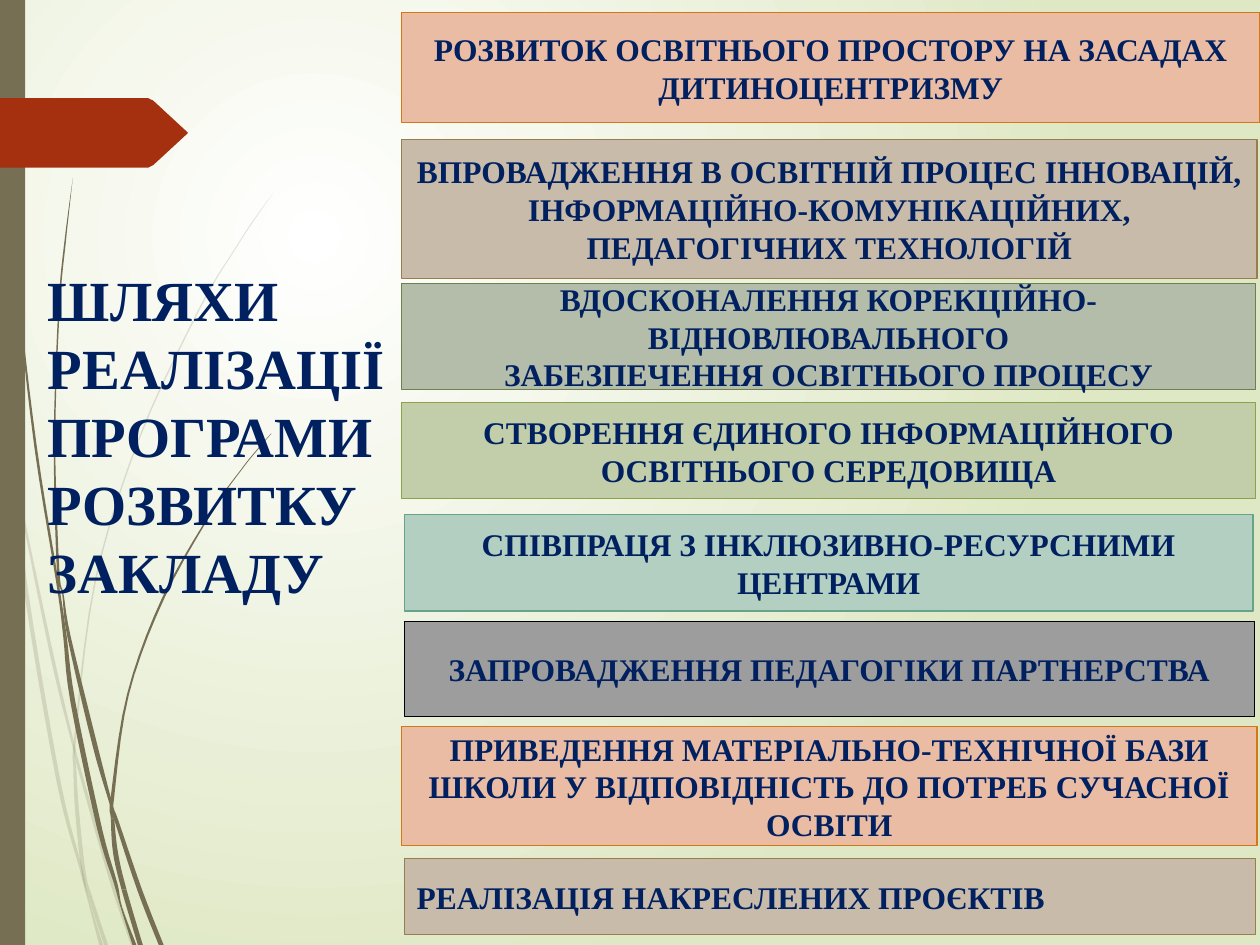
from lxml import etree
from pptx import Presentation
from pptx.dml.color import RGBColor
from pptx.enum.shapes import MSO_SHAPE
from pptx.enum.text import MSO_ANCHOR as ANCHOR, MSO_AUTO_SIZE as AUTO, PP_ALIGN as ALIGN
from pptx.oxml.ns import qn
from pptx.util import Cm, Pt

FONT = "Times New Roman"
WIDTH, HEIGHT = 25.4, 19.05
CURVE_STEPS = 5
COLORS = {
    "white": "FFFFFF", "lime": "DFE8C4", "bark": "766F54", "red": "A53010",
    "navy": "002060", "peach": "EBBCA4", "orange": "D47817", "sand": "C8BBAA",
    "brown": "987D4D", "sage": "B4BCAA", "moss": "6D804F", "leaf": "C2CEA9",
    "olive": "8BA249", "mint": "B3CFC2", "teal": "65A48B", "gray": "9D9D9D",
    "black": "000000",
}

PALE_STEMS = [
    ([2, 6],
     [(0, 7.16, 0.02), (0, 7.38, 0.05), (0.23, 9.22, 0.05), (0.53, 11.93, 0.08),
      (1.18, 15.75, 0.08), (1.63, 17.5, 0.06), (1.77, 18.1, 0.03), (2.04, 19.05, 0.08)]),
    ([4],
     [(0.25, 8.76, 0), (0.3, 9.55, 0.03), (1.05, 13.23, 0.07), (1.49, 15.06, 0.05),
      (1.6, 15.5, 0.06), (2.2, 17.6, 0.08), (2.69, 19.05, 0.1)]),
    ([6, 7, 10],
     [(5.51, 3.89, 0), (5.11, 4.45, 0.02), (4.74, 5.02, 0.02), (4.03, 6.21, 0.03),
      (2.81, 8.83, 0.03), (1.92, 11.72, 0.03), (1.52, 14.83, 0.04), (1.51, 15.49, 0.06),
      (1.56, 16.41, 0.08), (1.69, 17.6, 0.08), (1.82, 18.08, 0.08), (2.14, 19.05, 0.08)]),
]
DARK_STEMS = [
    ([4, 9],
     [(0.06, 0, 0.03), (0.14, 2.79, 0.03), (0.37, 5.92, 0.03), (0.72, 9.02, 0.05),
      (1.17, 11.81, 0.05), (1.31, 12.83, 0.07), (1.47, 14.15, 0.1), (2.01, 16.71, 0.1),
      (2.33, 17.8, 0.07), (2.45, 18.3, 0.03), (2.71, 19.05, 0.08)]),
    ([5, 8],
     [(1.47, 3.58, 0), (1.31, 4.9, 0.03), (1.19, 6.22, 0.03), (1.1, 8.86, 0.03),
      (1.17, 11.46, 0.05), (1.27, 11.99, 0.03), (1.39, 12.83, 0.07), (1.91, 15.01, 0.1),
      (2.24, 16.21, 0.06), (2.35, 16.55, 0.08), (2.82, 17.95, 0.1), (3.25, 19.05, 0.1)]),
    ([6, 7, 9],
     [(5.47, 8.74, 0.01), (5.16, 9.1, 0.02), (4.85, 9.49, 0.02), (4.28, 10.3, 0.03),
      (3.29, 12.06, 0.05), (2.58, 14, 0.04), (2.27, 16.05, 0.07), (2.27, 16.5, 0.07),
      (2.33, 17.2, 0.1), (2.5, 17.93, 0.1), (2.83, 19.05, 0.1)]),
]

GOALS = [
    (8.1, 0.26, 17.3, 2.21, "peach", "orange", ALIGN.CENTER,
     ["РОЗВИТОК ОСВІТНЬОГО ПРОСТОРУ НА ЗАСАДАХ ДИТИНОЦЕНТРИЗМУ"]),
    (8.1, 2.81, 17.24, 2.8, "sand", "brown", ALIGN.CENTER,
     ["ВПРОВАДЖЕННЯ В ОСВІТНІЙ ПРОЦЕС ІННОВАЦІЙ, "
      "ІНФОРМАЦІЙНО-КОМУНІКАЦІЙНИХ, ПЕДАГОГІЧНИХ ТЕХНОЛОГІЙ"]),
    (8.1, 5.72, 17.21, 2.13, "sage", "moss", ALIGN.CENTER,
     ["ВДОСКОНАЛЕННЯ КОРЕКЦІЙНО-ВІДНОВЛЮВАЛЬНОГО", "ЗАБЕЗПЕЧЕННЯ ОСВІТНЬОГО ПРОЦЕСУ"]),
    (8.1, 8.12, 17.21, 1.93, "leaf", "olive", ALIGN.CENTER,
     ["СТВОРЕННЯ ЄДИНОГО ІНФОРМАЦІЙНОГО ОСВІТНЬОГО СЕРЕДОВИЩА"]),
    (8.15, 10.37, 17.11, 1.95, "mint", "teal", ALIGN.CENTER,
     ["СПІВПРАЦЯ З ІНКЛЮЗИВНО-РЕСУРСНИМИ ЦЕНТРАМИ"]),
    (8.15, 12.53, 17.14, 1.92, "gray", "black", ALIGN.CENTER,
     ["ЗАПРОВАДЖЕННЯ ПЕДАГОГІКИ ПАРТНЕРСТВА"]),
    (8.1, 14.65, 17.24, 2.4, "peach", "orange", ALIGN.CENTER,
     ["ПРИВЕДЕННЯ МАТЕРІАЛЬНО-ТЕХНІЧНОЇ БАЗИ ШКОЛИ "
      "У ВІДПОВІДНІСТЬ ДО ПОТРЕБ СУЧАСНОЇ ОСВІТИ"]),
    (8.15, 17.31, 17.16, 1.53, "sand", "brown", ALIGN.LEFT,
     ["РЕАЛІЗАЦІЯ НАКРЕСЛЕНИХ ПРОЄКТІВ"]),
]


def rgb(name):
    return RGBColor.from_string(COLORS[name])


def paint(sp, fill, line=None):
    sp.shadow.inherit = False
    sp.fill.solid()
    sp.fill.fore_color.rgb = rgb(fill)
    if line:
        sp.line.color.rgb = rgb(line)
        sp.line.width = Pt(0.75)
    else:
        sp.line.fill.background()


def style_paragraph(p, size, align):
    p.alignment = align
    p.font.name = FONT
    p.font.size = Pt(size)
    p.font.bold = True
    p.font.color.rgb = rgb("navy")


def add_background(s):
    fill = s.background.fill
    fill.gradient()
    for stop, name, pos in zip(fill.gradient_stops, ("white", "lime"), (0, 1)):
        stop.color.rgb = rgb(name)
        stop.position = pos
    lin = next(s.background._cSld.iter(qn("a:lin")))
    radial = etree.Element(qn("a:path"), path="circle")
    etree.SubElement(radial, qn("a:fillToRect"), l="50000", t="50000", r="100000", b="100000")
    lin.getparent().replace(lin, radial)


def add_outline(shapes, points, fill):
    corners = [(Cm(x), Cm(y)) for x, y in points]
    builder = shapes.build_freeform(*corners[0])
    builder.add_line_segments(corners[1:], close=True)
    sp = builder.convert_to_shape()
    paint(sp, fill)
    return sp


def smooth_curve(nodes):
    padded = [nodes[0], *nodes, nodes[-1]]
    curve = []
    for a, b, c, d in zip(padded, padded[1:], padded[2:], padded[3:]):
        for t in (i / CURVE_STEPS for i in range(CURVE_STEPS)):
            curve.append(tuple(
                q + t * (r - p) / 2 + t * t * (2 * p - 5 * q + 4 * r - s) / 2
                + t ** 3 * (3 * q - p - 3 * r + s) / 2
                for p, q, r, s in zip(a, b, c, d)))
    return curve + [nodes[-1]]


def add_stems(s, stems, opacity):
    group = s.shapes.add_group_shape()
    for joints, nodes in stems:
        curve = smooth_curve(nodes)
        cuts = [0, *(j * CURVE_STEPS for j in joints), len(curve) - 1]
        for start, end in zip(cuts, cuts[1:]):
            piece = curve[start:end + 1]
            left = [(max(x - w / 2, 0), y) for x, y, w in piece]
            right = [(x + w / 2, y) for x, y, w in reversed(piece)]
            sp = add_outline(group.shapes, left + right, "bark")
            if opacity < 100:
                color = next(sp.fill._xPr.iter(qn("a:srgbClr")))
                etree.SubElement(color, qn("a:alpha"), val=str(opacity * 1000))


def add_side_band(s, x, y, w, h):
    paint(s.shapes.add_shape(MSO_SHAPE.RECTANGLE, Cm(x), Cm(y), Cm(w), Cm(h)), "bark")


def add_marker(s, x, y, w, h):
    half, bevel = h / 2, 0.05
    upper = [(x, y), (x + w - half - 2 * bevel, y), (x + w - half, y + bevel),
             (x + w - bevel, y + half - bevel), (x + w, y + half)]
    lower = [(px, 2 * y + h - py) for px, py in reversed(upper[:-1])]
    add_outline(s.shapes, upper + lower, "red")


def add_title(s, x, y, w, h):
    title = s.shapes.title
    title.left, title.top, title.width, title.height = Cm(x), Cm(y), Cm(w), Cm(h)
    tf = title.text_frame
    tf.text = "ШЛЯХИ РЕАЛІЗАЦІЇ ПРОГРАМИ РОЗВИТКУ ЗАКЛАДУ"
    tf.word_wrap = True
    tf.auto_size = AUTO.NONE
    tf.vertical_anchor = ANCHOR.MIDDLE
    style_paragraph(tf.paragraphs[0], 32.4, ALIGN.LEFT)
    s.shapes._spTree.append(title._element)


def add_goal(s, x, y, w, h, fill, line, align, lines):
    sp = s.shapes.add_shape(MSO_SHAPE.RECTANGLE, Cm(x), Cm(y), Cm(w), Cm(h))
    paint(sp, fill, line)
    tf = sp.text_frame
    tf.word_wrap = True
    tf.vertical_anchor = ANCHOR.MIDDLE
    tf.text = "\n".join(lines)
    for p in tf.paragraphs:
        style_paragraph(p, 18, align)


def main():
    prs = Presentation()
    prs.slide_width, prs.slide_height = Cm(WIDTH), Cm(HEIGHT)
    s = prs.slides.add_slide(prs.slide_layouts[0])
    subtitle = s.placeholders[1]._element
    subtitle.getparent().remove(subtitle)
    add_background(s)
    add_stems(s, PALE_STEMS, 20)
    add_stems(s, DARK_STEMS, 100)
    add_side_band(s, 0, 0, 0.51, HEIGHT)
    add_marker(s, 0, 1.98, 3.79, 1.4)
    add_title(s, 0.71, 5.13, 7.8, 7.26)
    for goal in GOALS:
        add_goal(s, *goal)
    prs.save("out.pptx")


if __name__ == "__main__":
    main()
